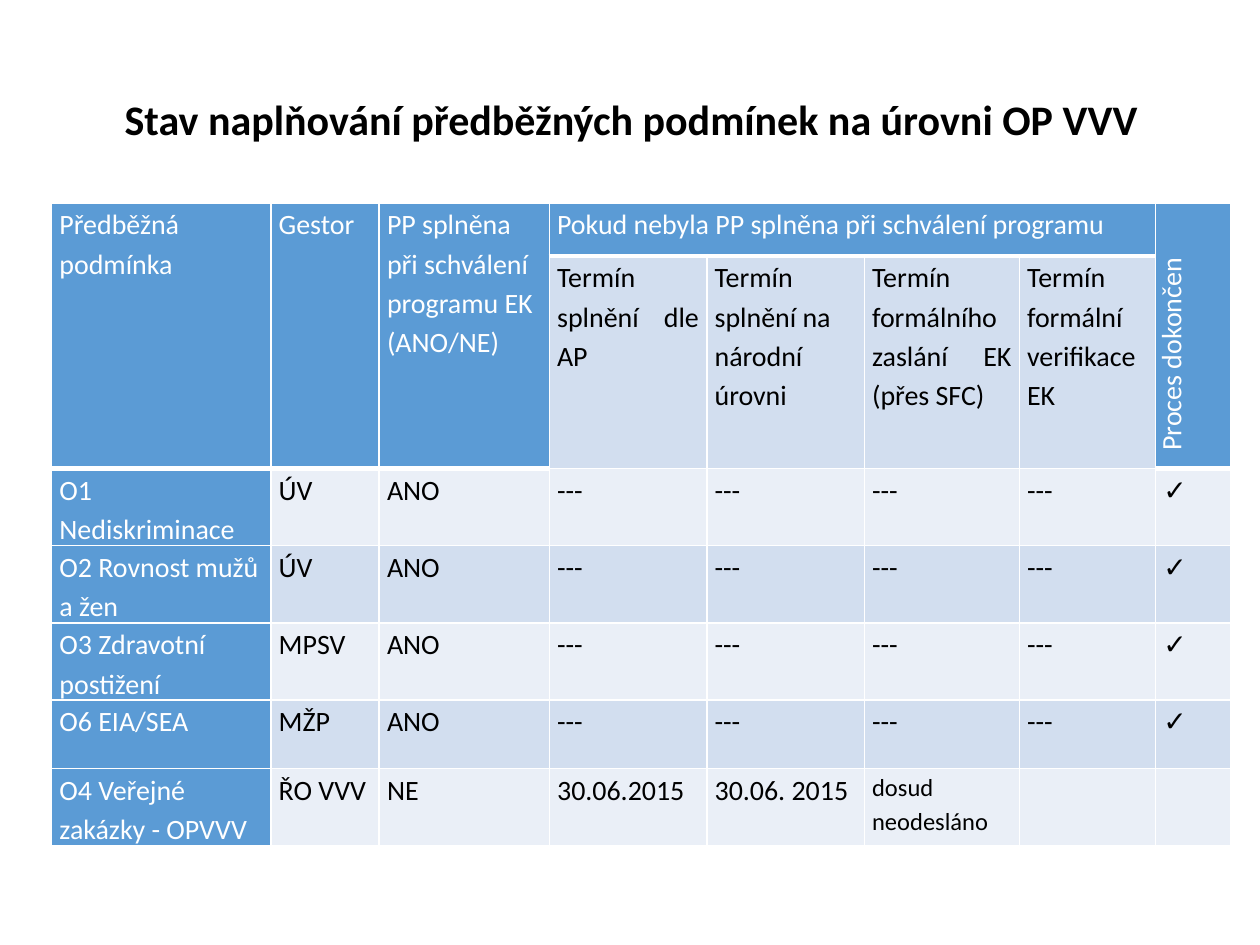
from lxml import etree
from pptx import Presentation
from pptx import util as u
from pptx.dml.color import RGBColor
from pptx.enum import text
from pptx.oxml import ns

Pt = u.Pt
AL = text.PP_ALIGN
BLUE, MID, PALE = "5B9BD5", "D2DEEF", "EAEFF7"
WHITE, BLACK = "FFFFFF", "000000"
COLS = [125.3, 61.9, 97.2, 90, 90, 88.6, 77.8, 43.2]
ROWS = [30.4, 121.3, 44, 44, 44, 39, 44]
HEADS = ["Předběžná podmínka", "Gestor",
         "PP splněna při schválení programu EK (ANO/NE)",
         "Pokud nebyla PP splněna při schválení programu"]
SUBS = ["Termín splnění dle AP", "Termín splnění na národní úrovni",
        "Termín formálního zaslání EK (přes SFC)",
        "Termín formální verifikace EK"]
DONE = ["ANO"] + ["---"] * 4 + ["✓"]
BODY = [["O1 Nediskriminace", "ÚV"] + DONE,
        ["O2 Rovnost mužů a žen", "ÚV"] + DONE,
        ["O3 Zdravotní postižení", "MPSV"] + DONE,
        ["O6 EIA/SEA", "MŽP"] + DONE,
        ["O4 Veřejné zakázky - OPVVV", "ŘO VVV", "NE", "30.06.2015",
         "30.06. 2015", "dosud neodesláno", "", ""]]


def color(code):
    return RGBColor.from_string(code)


def apply(obj, vals):
    for key, val in vals.items():
        setattr(obj, key, val)


def write(par, words, size, ink, align, bold=False, space=1.15):
    apply(par, {"alignment": align, "line_spacing": space})
    if words:
        run = par.add_run()
        run.text = words
        apply(run.font, {"name": "Calibri", "size": Pt(size), "bold": bold})
        run.font.color.rgb = color(ink)


def border(cell, base=1):
    props = cell._tc.get_or_add_tcPr()
    for spot, side in enumerate("LRTB"):
        width = base if side == "B" else 1
        line = etree.Element(ns.qn("a:ln" + side), w=str(int(Pt(width))))
        fill = etree.SubElement(line, ns.qn("a:solidFill"))
        etree.SubElement(fill, ns.qn("a:srgbClr"), val=WHITE)
        props.insert(spot, line)


def fill_cell(cell, words, back, ink=BLACK, size=16, align=AL.JUSTIFY,
              space=1.15):
    apply(cell, {"margin_left": Pt(4.5), "margin_right": Pt(4.5),
                 "margin_top": 0, "margin_bottom": 0})
    write(cell.text_frame.paragraphs[0], words, size, ink, align, space=space)
    cell.fill.solid()
    cell.fill.fore_color.rgb = color(back)


def add_title(slide):
    box = slide.shapes.add_textbox(Pt(40.3), Pt(49.7), Pt(640.8), Pt(172))
    box.text_frame.word_wrap = True
    write(box.text_frame.paragraphs[0],
          "Stav naplňování předběžných podmínek na úrovni OP VVV",
          24, BLACK, AL.CENTER, True, 1.0)


def add_head(grid):
    for col in (0, 1, 2, 7):
        grid.cell(0, col).merge(grid.cell(1, col))
    grid.cell(0, 3).merge(grid.cell(0, 6))
    for col, words in enumerate(HEADS):
        align = AL.LEFT if col in (1, 2) else AL.JUSTIFY
        fill_cell(grid.cell(0, col), words, BLUE, WHITE, align=align)
    for col, words in enumerate(SUBS, 3):
        align = AL.LEFT if col == 4 else AL.JUSTIFY
        fill_cell(grid.cell(1, col), words, MID, align=align)
    side = grid.cell(0, 7)
    fill_cell(side, "Proces dokončen", BLUE, WHITE, align=AL.LEFT,
              space=Pt(19.2))
    side.vertical_anchor = text.MSO_ANCHOR.MIDDLE
    side._tc.get_or_add_tcPr().set("vert", "vert270")
    props = side.text_frame.paragraphs[0]._p.get_or_add_pPr()
    props.set("marL", str(int(Pt(5.8))))


def add_body(grid):
    for row, items in enumerate(BODY, 2):
        back = MID if row % 2 else PALE
        fill_cell(grid.cell(row, 0), items[0], BLUE, WHITE, align=AL.LEFT)
        for col, words in enumerate(items[1:], 1):
            size = 14 if words.startswith("dosud") else 16
            fill_cell(grid.cell(row, col), words, back, size=size)


def add_grid(slide):
    frame = slide.shapes.add_table(len(ROWS), len(COLS), Pt(29.5), Pt(116),
                                   Pt(sum(COLS)), Pt(sum(ROWS)))
    grid = frame.table
    apply(grid, {"first_row": False, "horz_banding": False})
    for col, width in zip(grid.columns, COLS):
        col.width = Pt(width)
    for row, height in zip(grid.rows, ROWS):
        row.height = Pt(height)
    add_head(grid)
    add_body(grid)
    for row in range(len(ROWS)):
        for col in range(len(COLS)):
            border(grid.cell(row, col), 1 if row else 3)


def main():
    deck = Presentation()
    apply(deck, {"slide_width": Pt(720), "slide_height": Pt(540)})
    slide = deck.slides.add_slide(deck.slide_layouts[6])
    add_title(slide)
    add_grid(slide)
    deck.save("out.pptx")


if __name__ == "__main__":
    main()
